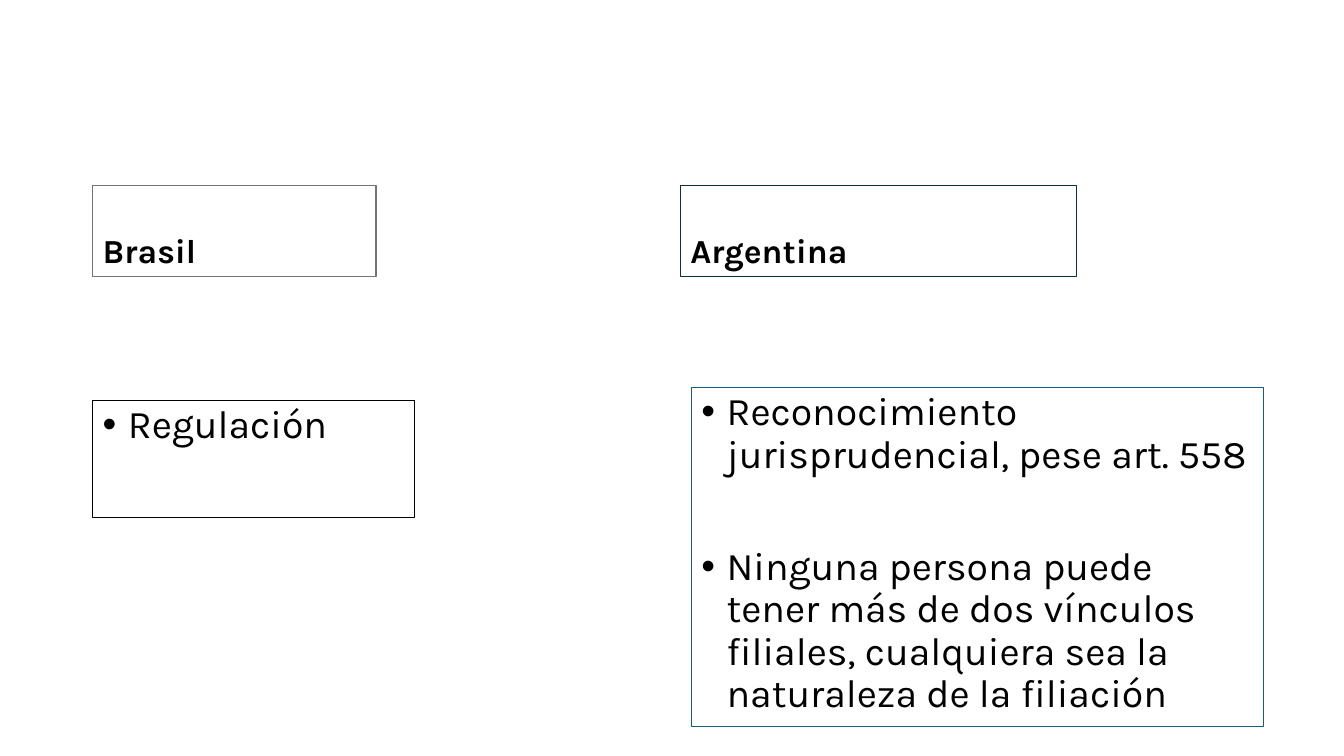
from lxml.etree import SubElement
from pptx import Presentation
from pptx.dml.color import RGBColor
from pptx.enum.shapes import MSO_SHAPE
from pptx.enum.text import MSO_ANCHOR, PP_ALIGN
from pptx.oxml.ns import qn
from pptx.util import Inches, Pt


def color(value):
    return RGBColor.from_string(value)


class ComparisonSlide:
    """Draws framed headings and bullet lists, placed by percent of the slide size."""

    font_name = "Karla"
    text_color = "000000"
    indent = Inches(0.25)
    bullet_gap = Pt(50)

    def __init__(self, presentation):
        self.width = presentation.slide_width
        self.height = presentation.slide_height
        self.slide = presentation.slides.add_slide(presentation.slide_layouts[6])

    def frame(self, left, top, width, height, line_color, anchor):
        shape = self.slide.shapes.add_shape(
            MSO_SHAPE.RECTANGLE,
            round(self.width * left / 100), round(self.height * top / 100),
            round(self.width * width / 100), round(self.height * height / 100))
        shape.shadow.inherit = False
        shape.fill.background()
        shape.line.color.rgb = color(line_color)
        shape.line.width = Pt(0.75)
        shape.text_frame.word_wrap = True
        shape.text_frame.vertical_anchor = anchor
        return shape.text_frame

    def set_text(self, paragraph, text, size, bold=False):
        paragraph.text = text
        paragraph.alignment = PP_ALIGN.LEFT
        paragraph.line_spacing = 0.9
        style = {"name": self.font_name, "size": Pt(size), "bold": bold}
        for name, value in style.items():
            setattr(paragraph.font, name, value)
        paragraph.font.color.rgb = color(self.text_color)

    def add_bullet(self, paragraph):
        properties = paragraph._p.get_or_add_pPr()
        properties.set("marL", str(self.indent))
        properties.set("indent", str(-self.indent))
        SubElement(properties, qn("a:buFont"), typeface="Arial")
        SubElement(properties, qn("a:buChar"), char="•")

    def heading(self, text, *box, line_color):
        text_frame = self.frame(*box, line_color, MSO_ANCHOR.BOTTOM)
        self.set_text(text_frame.paragraphs[0], text, 24, bold=True)

    def bullets(self, texts, *box, line_color):
        text_frame = self.frame(*box, line_color, MSO_ANCHOR.TOP)
        for index, text in enumerate(texts):
            paragraph = text_frame.add_paragraph() if index else text_frame.paragraphs[0]
            self.add_bullet(paragraph)
            self.set_text(paragraph, text, 28)
            if index:
                paragraph.space_before = self.bullet_gap


def main():
    presentation = Presentation()
    presentation.slide_width = Inches(13.33)
    presentation.slide_height = Inches(7.5)
    comparison = ComparisonSlide(presentation)

    comparison.heading("Brasil", 6.9, 24.53, 21.08, 12, line_color="747474")
    comparison.bullets(["Regulación"], 6.9, 52.93, 23.93, 15.47, line_color="000000")

    comparison.heading("Argentina", 50.63, 24.53, 29.48, 12, line_color="0B3041")
    comparison.bullets(
        ["Reconocimiento jurisprudencial, pese art. 558",
         "Ninguna persona puede tener más de dos vínculos filiales, "
         "cualquiera sea la naturaleza de la filiación"],
        51.45, 51.2, 42.53, 44.93, line_color="156082")

    presentation.save("out.pptx")


if __name__ == "__main__":
    main()
